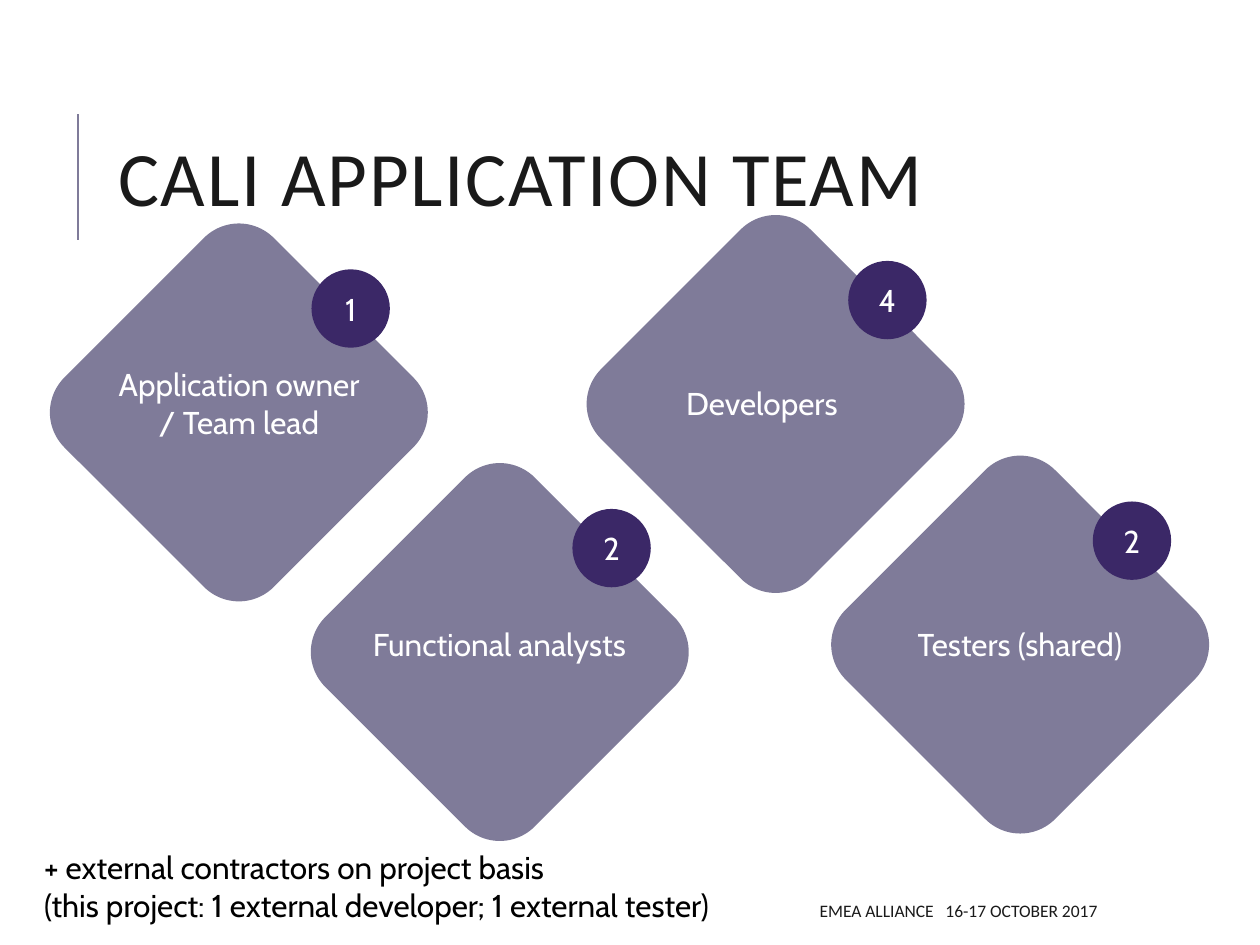
from dataclasses import dataclass

from lxml.etree import SubElement
from pptx import Presentation
from pptx.dml.color import RGBColor
from pptx.enum.shapes import MSO_CONNECTOR, MSO_SHAPE
from pptx.enum.text import MSO_ANCHOR, MSO_AUTO_SIZE, PP_ALIGN
from pptx.oxml.ns import qn
from pptx.shapes.autoshape import Shape
from pptx.slide import Slide
from pptx.text.text import TextFrame
from pptx.util import Cm, Pt

COLORS = {
    "role": "7F7B99",
    "badge": "3B2867",
    "heading": "1A1A1A",
    "light": "FFFFFF",
    "note": "000000",
}
DIAMOND_SIDE = 5.97
BADGE_SIZE = 1.58
BADGE_OFFSET = (4.45, 0.1)
LABEL_WIDTH = 5.72
LINE_HEIGHT = 0.78
LABEL_PADDING = 0.25


@dataclass
class Role:
    label: str
    count: int
    left: float
    top: float
    label_left: float
    label_top: float


ROLES = [
    Role("Application owner\n/ Team lead", 1, 1.83, 5.33, 1.96, 7.24),
    Role("Functional analysts", 2, 7.09, 10.16, 7.21, 12.47),
    Role("Developers", 4, 12.65, 5.16, 12.5, 7.62),
    Role("Testers (shared)", 2, 17.58, 10.01, 17.7, 12.47),
]


def color(name: str) -> RGBColor:
    return RGBColor.from_string(COLORS[name])


def format_text(frame: TextFrame, font: str, size: float, ink: str, align: PP_ALIGN) -> None:
    for paragraph in frame.paragraphs:
        paragraph.alignment = align
        for run in paragraph.runs:
            run.font.name = font
            run.font.size = Pt(size)
            run.font.color.rgb = color(ink)


def add_filled(slide: Slide, preset: MSO_SHAPE, left: float, top: float, size: float, fill: str) -> Shape:
    filled = slide.shapes.add_shape(preset, Cm(left), Cm(top), Cm(size), Cm(size))
    filled.fill.solid()
    filled.fill.fore_color.rgb = color(fill)
    filled.line.fill.background()
    filled.shadow.inherit = False
    return filled


def add_text(slide: Slide, left: float, top: float, width: float, height: float, wrap: bool = True) -> TextFrame:
    frame = slide.shapes.add_textbox(Cm(left), Cm(top), Cm(width), Cm(height)).text_frame
    frame.word_wrap = wrap
    return frame


def add_title(slide: Slide) -> None:
    heading = slide.shapes.title
    heading.left, heading.top, heading.width, heading.height = Cm(2.13), Cm(1.63), Cm(20.24), Cm(4.17)
    frame = heading.text_frame
    frame.text = "CALI APPLICATION TEAM"
    frame.auto_size = MSO_AUTO_SIZE.NONE
    frame.vertical_anchor = MSO_ANCHOR.MIDDLE
    frame.paragraphs[0].line_spacing = 0.8
    format_text(frame, "Calibri", 44, "heading", PP_ALIGN.LEFT)
    frame.paragraphs[0].runs[0].font._element.set("spc", "100")


def add_title_rule(slide: Slide) -> None:
    rule = slide.shapes.add_connector(MSO_CONNECTOR.STRAIGHT, Cm(1.57), Cm(4.83), Cm(1.57), Cm(2.29))
    rule.line.color.rgb = color("role")
    rule.line.width = Pt(1.5)
    SubElement(rule._element.spPr, qn("a:effectLst"))


def add_role(slide: Slide, role: Role) -> None:
    diamond = add_filled(slide, MSO_SHAPE.ROUNDED_RECTANGLE, role.left, role.top, DIAMOND_SIDE, "role")
    diamond.rotation = 45

    dx, dy = BADGE_OFFSET
    badge = add_filled(slide, MSO_SHAPE.OVAL, role.left + dx, role.top + dy, BADGE_SIZE, "badge")
    count = badge.text_frame
    count.margin_left = count.margin_right = 0
    count.vertical_anchor = MSO_ANCHOR.MIDDLE
    count.text = str(role.count)
    format_text(count, "Cabin", 18, "light", PP_ALIGN.CENTER)

    height = LABEL_PADDING + LINE_HEIGHT * len(role.label.splitlines())
    label = add_text(slide, role.label_left, role.label_top, LABEL_WIDTH, height)
    label.text = role.label
    label.auto_size = MSO_AUTO_SIZE.SHAPE_TO_FIT_TEXT
    format_text(label, "Cabin", 18, "light", PP_ALIGN.CENTER)


def add_footer(slide: Slide) -> None:
    footer = add_text(slide, 10.08, 17.98, 12.29, 0.76)
    footer.vertical_anchor = MSO_ANCHOR.MIDDLE
    event, gap, date = (footer.paragraphs[0].add_run() for _ in range(3))
    event.text, gap.text, date.text = "EMEA ALLIANCE", " ", "16-17 OCTOBER 2017"
    format_text(footer, "Calibri", 10, "heading", PP_ALIGN.RIGHT)
    gap.font._element.set("spc", "450")


def add_note(slide: Slide) -> None:
    note = add_text(slide, 0.64, 16.97, 13.94, 1.8, wrap=False)
    note.text = "+ external contractors on project basis\n(this project: 1 external developer; 1 external tester)"
    note.auto_size = MSO_AUTO_SIZE.SHAPE_TO_FIT_TEXT
    format_text(note, "Cabin", 18, "note", PP_ALIGN.LEFT)


def main() -> None:
    deck = Presentation()
    deck.slide_width, deck.slide_height = Cm(25.4), Cm(19.05)
    slide = deck.slides.add_slide(deck.slide_layouts[5])
    add_title_rule(slide)
    add_title(slide)
    for role in ROLES:
        add_role(slide, role)
    add_footer(slide)
    add_note(slide)
    deck.save("out.pptx")


if __name__ == "__main__":
    main()
